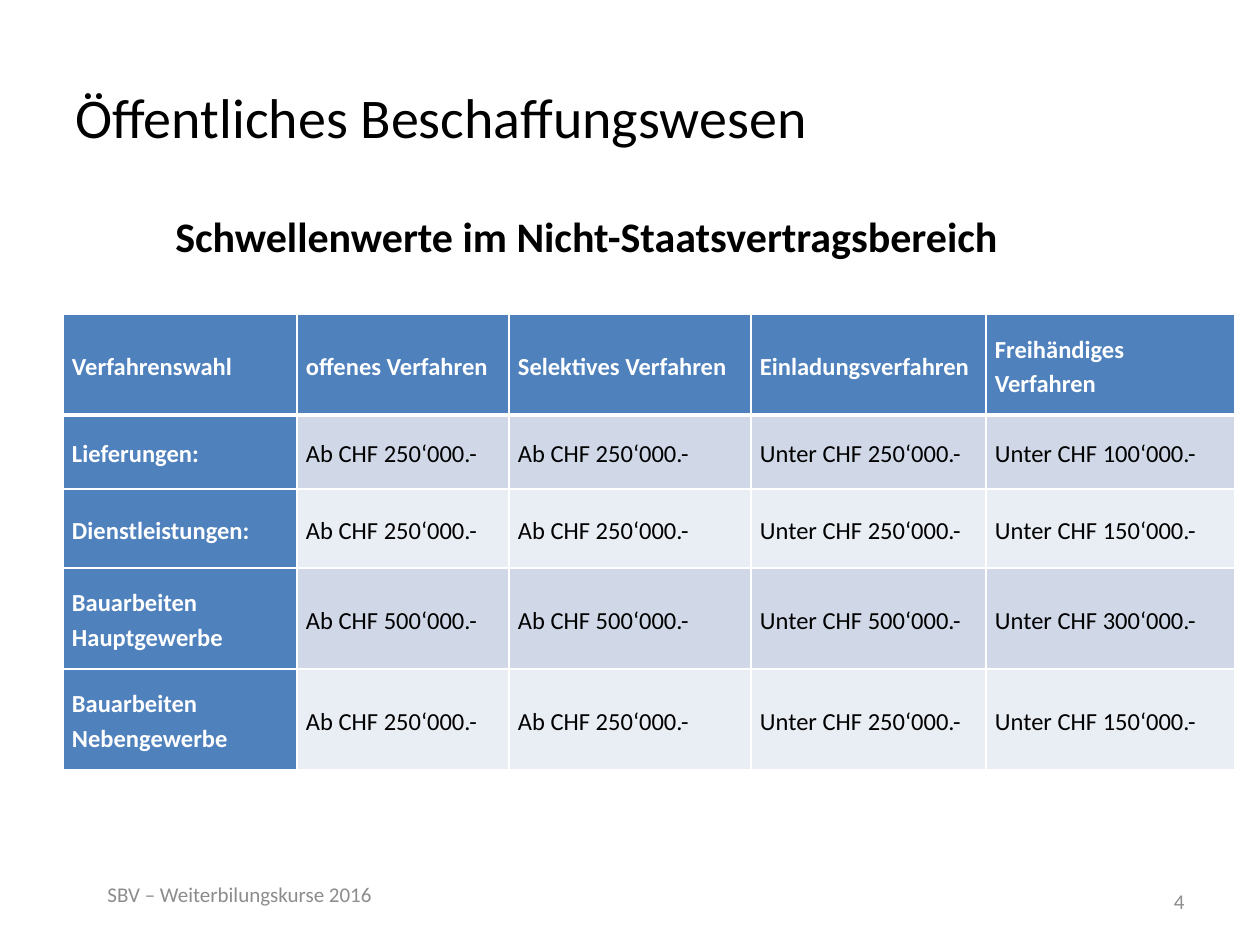
from lxml.etree import SubElement
from pptx import Presentation
from pptx.dml.color import RGBColor
from pptx.enum.text import MSO_ANCHOR as Anchor, PP_ALIGN as Align
from pptx.oxml.ns import qn
from pptx.util import Emu, Pt

EMU_PER_PX = 914400 / 126
FONT = "Calibri"
BLACK, WHITE, GREY = "000000", "FFFFFF", "8C8C8C"
BLUE, DARK_BAND, LIGHT_BAND = "4F81BD", "D0D8E8", "E9EDF4"

COLUMN_WIDTHS = [234, 212, 242, 235, 249]
ROW_HEIGHTS = [101, 74, 79, 101, 101]
HEADINGS = ["Verfahrenswahl", "offenes Verfahren", "Selektives Verfahren",
            "Einladungsverfahren", "Freihändiges Verfahren"]
# Category, threshold of the first three procedures, threshold of direct award
THRESHOLDS = [
    ("Lieferungen:", 250, 100),
    ("Dienstleistungen:", 250, 150),
    ("Bauarbeiten\nHauptgewerbe", 500, 300),
    ("Bauarbeiten\nNebengewerbe", 250, 150),
]


def px(length):
    return Emu(round(length * EMU_PER_PX))


def colour(value):
    return RGBColor.from_string(value)


def write(frame, text, size=14, color=BLACK, bold=False, align=Align.LEFT,
          anchor=Anchor.MIDDLE, spacing=None):
    frame.word_wrap = True
    frame.vertical_anchor = anchor
    para = frame.paragraphs[0]
    para.text = text.replace("\n", "\v")
    para.alignment = align
    para.line_spacing = spacing
    for span in para.runs:
        span.font.name = FONT
        span.font.size = Pt(size)
        span.font.bold = bold
        span.font.color.rgb = colour(color)


def add_title(page, text):
    title = page.shapes.title
    title.left, title.top, title.width, title.height = map(px, (63, 38, 1134, 157))
    write(title.text_frame, text, size=32)


def add_text(page, text, left, top, width, height, **style):
    box = page.shapes.add_textbox(*map(px, (left, top, width, height)))
    write(box.text_frame, text, **style)


def add_borders(cell, bottom):
    props = cell._tc.get_or_add_tcPr()
    for side, width in (("L", 1), ("R", 1), ("T", 1), ("B", bottom)):
        line = SubElement(props, qn(f"a:ln{side}"), w=str(Pt(width)))
        fill = SubElement(line, qn("a:solidFill"))
        SubElement(fill, qn("a:srgbClr"), val=WHITE)


def format_cell(cell, text, row, column):
    is_header = row == 0 or column == 0
    band = DARK_BAND if row % 2 else LIGHT_BAND
    add_borders(cell, bottom=3 if row == 0 else 1)
    cell.fill.solid()
    cell.fill.fore_color.rgb = colour(BLUE if is_header else band)
    cell.margin_left = cell.margin_right = px(9)
    cell.margin_top = cell.margin_bottom = 0
    write(cell.text_frame, text, color=WHITE if is_header else BLACK,
          bold=is_header, spacing=1.15)
    cell.vertical_anchor = Anchor.MIDDLE


def add_threshold_table(page, left, top):
    rows = [HEADINGS]
    for category, limit, direct in THRESHOLDS:
        start = f"Ab CHF {limit}‘000.-"
        rows.append([category, start, start, f"Unter CHF {limit}‘000.-",
                     f"Unter CHF {direct}‘000.-"])
    size = (left, top, sum(COLUMN_WIDTHS), sum(ROW_HEIGHTS))
    table = page.shapes.add_table(len(rows), len(HEADINGS), *map(px, size)).table
    table.horz_banding = False
    for column, width in zip(table.columns, COLUMN_WIDTHS):
        column.width = px(width)
    for line, height in zip(table.rows, ROW_HEIGHTS):
        line.height = px(height)
    for row, texts in enumerate(rows):
        for column, text in enumerate(texts):
            format_cell(table.cell(row, column), text, row, column)


def main():
    deck = Presentation()
    deck.slide_width, deck.slide_height = px(1260), px(945)
    page = deck.slides.add_slide(deck.slide_layouts[5])

    # Headings
    add_title(page, "Öffentliches Beschaffungswesen")
    add_text(page, "Schwellenwerte im Nicht-Staatsvertragsbereich",
             105, 204, 963, 63, size=24, bold=True,
             align=Align.CENTER, anchor=Anchor.TOP)

    # Thresholds by procedure
    add_threshold_table(page, 63, 314)

    # Footer
    add_text(page, "SBV – Weiterbilungskurse 2016", 95, 869, 294, 50,
             size=12, color=GREY)
    add_text(page, "4", 903, 876, 294, 50, size=12, color=GREY, align=Align.RIGHT)

    deck.save("out.pptx")


if __name__ == "__main__":
    main()
